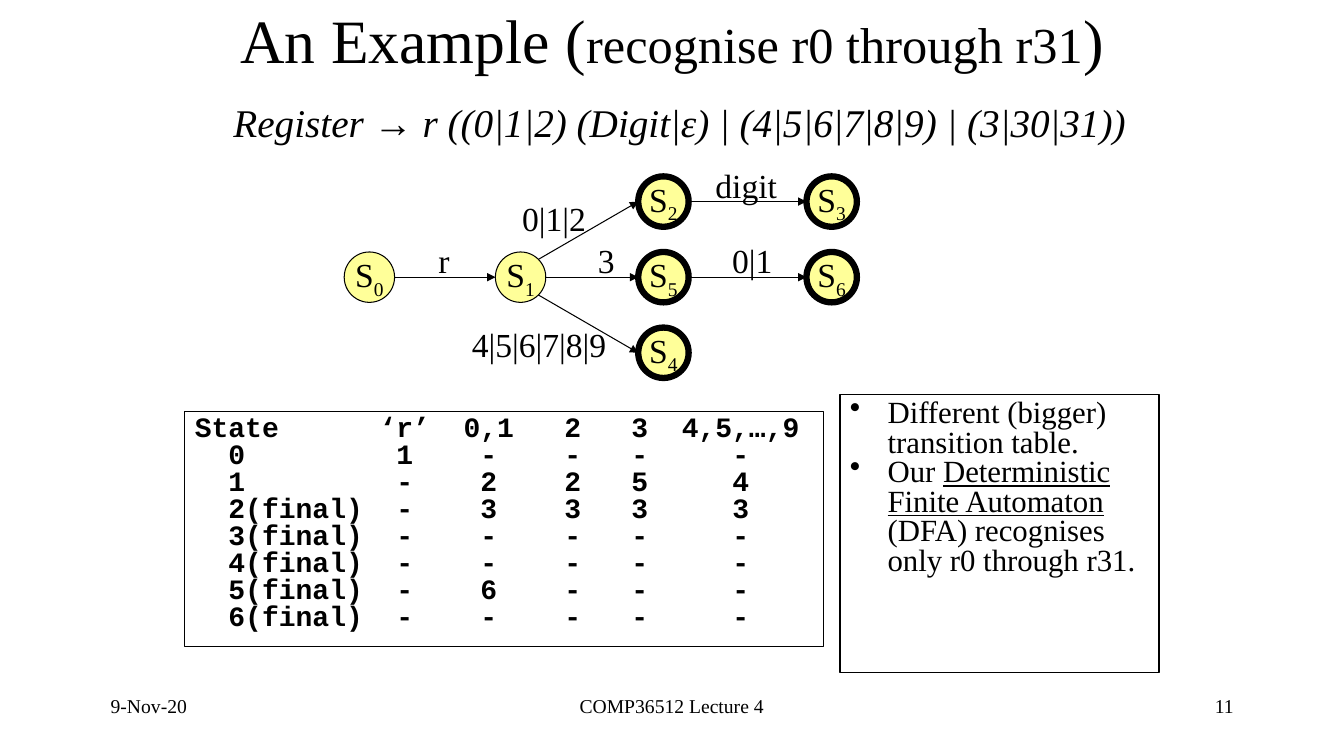
import math

from lxml import etree
from pptx import Presentation
from pptx.dml.color import RGBColor
from pptx.enum import shapes, text
from pptx.oxml import ns
from pptx.util import Cm, Pt

COLORS = {"ink": "000000", "state": "FFFF99"}
SERIF, MONO = "Times New Roman", "Courier New"
DIAMETER = 1.27
RADIUS = DIAMETER / 2
LEVELS = [5.08 + 1.905 * level for level in range(3)]
CHAR_WIDTH = 0.4233

STATES = {
    "0": (9.31, LEVELS[1], False),
    "1": (13.12, LEVELS[1], False),
    "2": (16.72, LEVELS[0], True),
    "3": (20.96, LEVELS[0], True),
    "5": (16.72, LEVELS[1], True),
    "6": (20.96, LEVELS[1], True),
    "4": (16.72, LEVELS[2], True),
}
TRANSITIONS = [("0", "1"), ("1", "2"), ("2", "3"), ("1", "5"), ("5", "6"), ("1", "4")]
INPUTS = [
    ("r", 10.8, 5.93, 0.78),
    ("0|1|2", 12.91, 4.87, 2.11),
    ("digit", 17.78, 4.02, 2.07),
    ("3", 14.82, 5.93, 0.93),
    ("0|1", 18.2, 5.93, 1.52),
    ("4|5|6|7|8|9", 11.64, 8.04, 3.9),
]
HEADINGS = ["State", "‘r’", "0,1", "2", "3", "4,5,…,9"]
TRANSITION_ROWS = [
    ("0", "1----"),
    ("1", "-2254"),
    ("2(final)", "-3333"),
    ("3(final)", "-----"),
    ("4(final)", "-----"),
    ("5(final)", "-6---"),
    ("6(final)", "-----"),
]
TAB_STOPS = [(2, "l"), (12.5, "ctr"), (17.5, "ctr"), (22.5, "ctr"), (26.5, "ctr"), (32.5, "ctr")]


def color(name):
    return RGBColor.from_string(COLORS[name])


def style(run, size, face=SERIF, bold=False, italic=False, underline=False):
    font = run.font
    font.size, font.name = Pt(size), face
    font.bold, font.italic, font.underline = bold, italic, underline
    font.color.rgb = color("ink")


def add_run(paragraph, wording, size, **look):
    run = paragraph.add_run()
    run.text = wording
    style(run, size, **look)
    return run


def add_box(slide, left, top, width, height, bordered=False):
    box = slide.shapes.add_textbox(Cm(left), Cm(top), Cm(width), Cm(height))
    box.text_frame.word_wrap = True
    if bordered:
        box.line.color.rgb = color("ink")
        box.line.width = Pt(0.75)
    return box.text_frame


def add_footer(slide, wording, left, width, align):
    paragraph = add_box(slide, left, 17.36, width, 1.27).paragraphs[0]
    paragraph.text = wording
    paragraph.alignment = align
    style(paragraph.runs[0], 14)


def add_title(slide):
    frame = add_box(slide, 4.66, 0.21, 24.55, 3.39)
    frame.vertical_anchor = text.MSO_ANCHOR.MIDDLE
    heading = frame.paragraphs[0]
    heading.alignment = text.PP_ALIGN.CENTER
    add_run(heading, "An Example (", 44)
    add_run(heading, "recognise r0 through r31", 36)
    add_run(heading, ")", 44)
    heading.add_line_break()
    add_run(heading, " ", 44)
    add_run(heading, "Register → r ((0|1|2) (Digit|ε) | (4|5|6|7|8|9) | (3|30|31))", 28, italic=True)


def add_state(slide, number, x, y, final):
    state = slide.shapes.add_shape(
        shapes.MSO_SHAPE.OVAL, Cm(x - RADIUS), Cm(y - RADIUS), Cm(DIAMETER), Cm(DIAMETER)
    )
    state.shadow.inherit = False
    state.fill.solid()
    state.fill.fore_color.rgb = color("state")
    state.line.color.rgb = color("ink")
    state.line.width = Pt(4.5 if final else 0.75)
    frame = state.text_frame
    frame.word_wrap = False
    frame.vertical_anchor = text.MSO_ANCHOR.MIDDLE
    label = frame.paragraphs[0]
    label.alignment = text.PP_ALIGN.CENTER
    add_run(label, "S", 24)
    subscript = add_run(label, number, 24)
    subscript._r.get_or_add_rPr().set("baseline", "-25000")


def add_transition(slide, source, target):
    x1, y1, _ = STATES[source]
    x2, y2, _ = STATES[target]
    angle = 0 if y1 == y2 else math.copysign(math.pi / 4, y2 - y1)
    arrow = slide.shapes.add_connector(
        shapes.MSO_CONNECTOR.STRAIGHT,
        Cm(x1 + RADIUS * math.cos(angle)),
        Cm(y1 + RADIUS * math.sin(angle)),
        Cm(x2 - RADIUS),
        Cm(y2),
    )
    arrow.line.color.rgb = color("ink")
    arrow.line.width = Pt(0.75)
    etree.SubElement(arrow.line._get_or_add_ln(), ns.qn("a:tailEnd"), type="triangle")
    etree.SubElement(arrow._element.spPr, ns.qn("a:effectLst"))


def add_input(slide, symbols, left, top, width):
    frame = add_box(slide, left, top, width, 1.27)
    frame.word_wrap = False
    frame.auto_size = text.MSO_AUTO_SIZE.SHAPE_TO_FIT_TEXT
    frame.text = symbols
    style(frame.paragraphs[0].runs[0], 24)


def add_transition_table(slide):
    frame = add_box(slide, 4.66, 10.37, 16.09, 5.93, bordered=True)
    rows = ["\t".join(HEADINGS)]
    rows += ["\t" + "\t".join([state, *targets]) for state, targets in TRANSITION_ROWS]
    frame.text = "\n".join(rows)
    for row in frame.paragraphs:
        row.line_spacing = 0.8
        style(row.runs[0], 20, face=MONO, bold=True)
        stops = etree.SubElement(row._p.get_or_add_pPr(), ns.qn("a:tabLst"))
        for chars, align in TAB_STOPS:
            etree.SubElement(stops, ns.qn("a:tab"), pos=str(Cm(chars * CHAR_WIDTH)), algn=align)


def add_remarks(slide):
    frame = add_box(slide, 21.17, 9.95, 8.04, 6.99, bordered=True)
    table_remark, automaton_remark = frame.paragraphs[0], frame.add_paragraph()
    add_run(table_remark, "Different (bigger) transition table.", 22)
    add_run(automaton_remark, "Our ", 22)
    add_run(automaton_remark, "Deterministic Finite Automaton", 22, underline=True)
    add_run(automaton_remark, " (DFA) recognises only r0 through r31.", 22)
    for remark in frame.paragraphs:
        remark.line_spacing = 0.8
        properties = remark._p.get_or_add_pPr()
        properties.set("marL", str(Cm(0.95)))
        properties.set("indent", str(Cm(-0.95)))
        etree.SubElement(properties, ns.qn("a:buChar"), char="•")


def main():
    deck = Presentation()
    deck.slide_width, deck.slide_height = Cm(33.87), Cm(19.05)
    slide = deck.slides.add_slide(deck.slide_layouts[6])
    add_footer(slide, "9-Nov-20", 2.54, 7.06, text.PP_ALIGN.LEFT)
    add_footer(slide, "COMP36512 Lecture 4", 11.57, 10.72, text.PP_ALIGN.CENTER)
    add_footer(slide, "11", 24.28, 7.06, text.PP_ALIGN.RIGHT)
    add_title(slide)
    add_transition_table(slide)
    for number, (x, y, final) in STATES.items():
        add_state(slide, number, x, y, final)
    for source, target in TRANSITIONS:
        add_transition(slide, source, target)
    for symbols, left, top, width in INPUTS:
        add_input(slide, symbols, left, top, width)
    add_remarks(slide)
    deck.save("out.pptx")


if __name__ == "__main__":
    main()
